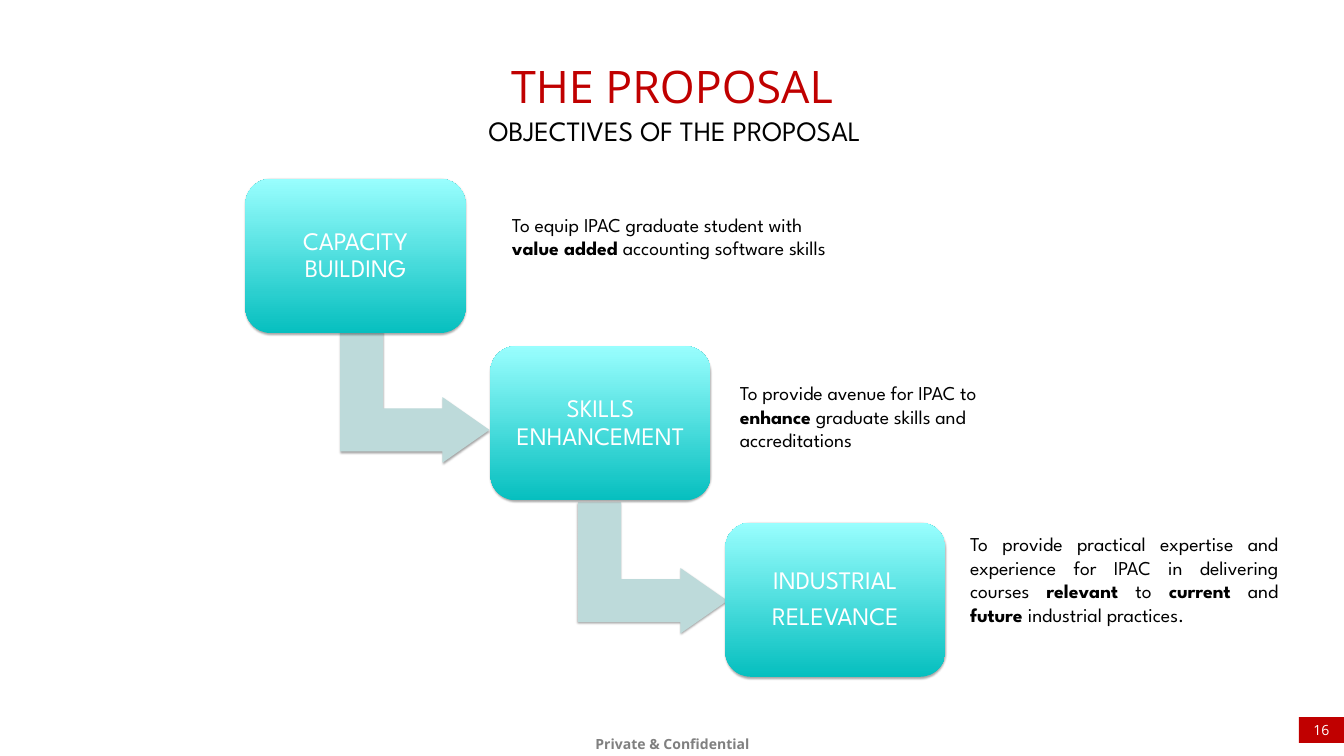
from lxml.etree import SubElement
from pptx import Presentation
from pptx.dml.color import RGBColor
from pptx.enum.shapes import MSO_SHAPE
from pptx.enum.text import MSO_ANCHOR, MSO_AUTO_SIZE, PP_ALIGN
from pptx.oxml.ns import qn
from pptx.util import Pt

HEADING_FONT = "Open Sans"
BODY_FONT = "League Spartan"


def colour(value):
    return RGBColor.from_string(value)


def write(shape, paragraphs, size, font=BODY_FONT, ink="000000", bold=False,
          align=PP_ALIGN.LEFT, anchor=MSO_ANCHOR.TOP, margins=(7.2, 3.6),
          line_spacing=None, space_after=None, grow=False):
    """Each paragraph is a list of spans; a span starting with * is bold."""
    frame = shape.text_frame
    frame.word_wrap = True
    frame.auto_size = MSO_AUTO_SIZE.SHAPE_TO_FIT_TEXT if grow else MSO_AUTO_SIZE.NONE
    frame.vertical_anchor = anchor
    frame.margin_left = frame.margin_right = Pt(margins[0])
    frame.margin_top = frame.margin_bottom = Pt(margins[1])
    for index, spans in enumerate(paragraphs):
        para = frame.add_paragraph() if index else frame.paragraphs[0]
        para.alignment = align
        if line_spacing:
            para.line_spacing = line_spacing
        if space_after:
            para.space_after = Pt(space_after)
        for text in spans:
            span = para.add_run()
            span.text = text.removeprefix("*")
            span.font.name = font
            span.font.size = Pt(size)
            span.font.bold = bold or text.startswith("*")
            span.font.color.rgb = colour(ink)


class ProposalPage:
    accent = "C00000"
    arrow_fill = "BDDADA"
    card_bottom, card_top = "06BFBF", "99FEFE"
    card_size = (314.6, 220.3)
    arrow_size = (187.2, 213.1)

    def __init__(self, page):
        self.page = page

    def shape(self, kind, left, top, width, height):
        shape = self.page.shapes.add_shape(kind, Pt(left), Pt(top), Pt(width), Pt(height))
        shape.shadow.inherit = False
        shape.line.fill.background()
        return shape

    def soft_shadow(self, shape):
        effects = shape._element.spPr.find(qn("a:effectLst"))
        shadow = SubElement(effects, qn("a:outerShdw"), blurRad=str(Pt(3.1)),
                            dist=str(Pt(1.8)), dir="5400000", rotWithShape="0")
        black = SubElement(shadow, qn("a:srgbClr"), val="000000")
        SubElement(black, qn("a:alpha"), val="35000")

    def title(self, text, left, top, width, height):
        box = self.page.shapes.title
        box.left, box.top, box.width, box.height = map(Pt, (left, top, width, height))
        write(box, [[text]], 64, HEADING_FONT, self.accent,
              align=PP_ALIGN.CENTER, margins=(19.4, 9.4))

    def text(self, paragraphs, left, top, width, height, size, **style):
        box = self.page.shapes.add_textbox(Pt(left), Pt(top), Pt(width), Pt(height))
        write(box, paragraphs, size, **style)

    def card(self, lines, left, top):
        card = self.shape(MSO_SHAPE.ROUNDED_RECTANGLE, left, top, *self.card_size)
        card.adjustments[0] = 0.167
        card.fill.gradient()
        card.fill.gradient_angle = 90
        for stop, value in zip(card.fill.gradient_stops, (self.card_bottom, self.card_top)):
            stop.color.rgb = colour(value)
        self.soft_shadow(card)
        write(card, [[line] for line in lines], 36, ink="FFFFFF", align=PP_ALIGN.CENTER,
              anchor=MSO_ANCHOR.MIDDLE, margins=(10.8, 10.8),
              line_spacing=0.9, space_after=12.6)

    def arrow(self, left, top):
        arrow = self.shape(MSO_SHAPE.BENT_UP_ARROW, left, top, *self.arrow_size)
        arrow.rotation = 90
        for index, value in enumerate((0.328, 0.25, 0.358)):
            arrow.adjustments[index] = value
        arrow.fill.solid()
        arrow.fill.fore_color.rgb = colour(self.arrow_fill)
        self.soft_shadow(arrow)

    def page_number(self, number, left, top, width, height):
        tag = self.shape(MSO_SHAPE.RECTANGLE, left, top, width, height)
        tag.fill.solid()
        tag.fill.fore_color.rgb = colour(self.accent)
        write(tag, [[number]], 20, HEADING_FONT, "FFFFFF", align=PP_ALIGN.CENTER,
              anchor=MSO_ANCHOR.MIDDLE, margins=(0, 0))


def main():
    deck = Presentation()
    deck.slide_width, deck.slide_height = Pt(1920), Pt(1080)
    page = ProposalPage(deck.slides.add_slide(deck.slide_layouts[5]))

    # Headings, footer and page number
    page.text([["Private & Confidential"]], 830, 1038, 261.4, 56, 20, font=HEADING_FONT,
              ink="808080", bold=True, align=PP_ALIGN.CENTER, margins=(17.3, 8.6),
              line_spacing=1.2)
    page.title("THE PROPOSAL", 110, 75, 1700, 97)
    page.text([["OBJECTIVES OF THE PROPOSAL"]], 113.8, 153.4, 1700, 67.7, 40,
              align=PP_ALIGN.CENTER, margins=(19.4, 9.4), grow=True)
    page.page_number("16", 1855.4, 1024.6, 64.6, 36.7)

    # Steps: each arrow lies behind the card it leaves
    steps = [
        (["CAPACITY BUILDING"], (350.6, 255.6), (499, 460.8)),
        (["SKILLS ENHANCEMENT"], (700.6, 494.6), (838.8, 704.9)),
        (["INDUSTRIAL", "RELEVANCE"], (1036.1, 746.6), None),
    ]
    for lines, card_place, arrow_place in steps:
        if arrow_place:
            page.arrow(*arrow_place)
        page.card(lines, *card_place)

    # Objectives beside the cards
    objectives = [
        (["To equip IPAC graduate student with ", "*value added ",
          "accounting software skills"], (724.3, 300.2, 478, 108.7), PP_ALIGN.LEFT),
        (["To provide avenue for IPAC to ", "*enhance",
          " graduate skills and accreditations"], (1049.8, 540.7, 432, 108.7), PP_ALIGN.LEFT),
        (["To provide practical expertise and experience for IPAC in delivering courses ",
          "*relevant", " to ", "*current", " and ", "*future ", "industrial practices."],
         (1378.8, 756.7, 454.3, 177.1), PP_ALIGN.JUSTIFY),
    ]
    for spans, place, align in objectives:
        page.text([spans], *place, 28, align=align, grow=True)

    deck.save("out.pptx")


if __name__ == "__main__":
    main()
